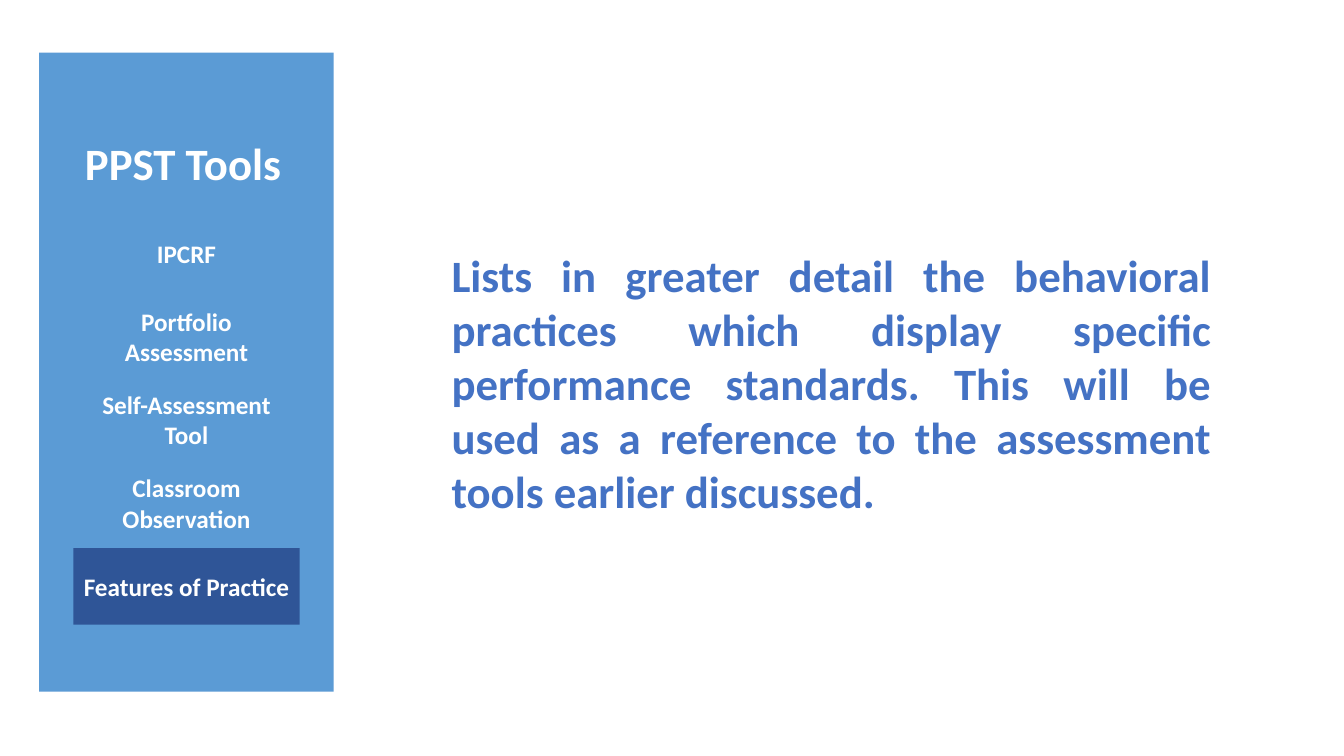
"""Build the PPST Tools slide with its sidebar menu and the Features of Practice text."""
from pptx import Presentation
from pptx.dml.color import RGBColor
from pptx.enum.shapes import MSO_SHAPE
from pptx.enum.text import MSO_ANCHOR, PP_ALIGN
from pptx.util import Cm, Pt

RECT = MSO_SHAPE.RECTANGLE
MIDDLE = MSO_ANCHOR.MIDDLE
CENTER, JUSTIFY = PP_ALIGN.CENTER, PP_ALIGN.JUSTIFY
WHITE = RGBColor(0xFF, 0xFF, 0xFF)
SKY = RGBColor(0x5B, 0x9B, 0xD5)
NAVY = RGBColor(0x2F, 0x55, 0x97)
BLUE = RGBColor(0x44, 0x72, 0xC4)


def add_rect(left, top, width, height, color):
    sp = s.shapes.add_shape(RECT, Cm(left), Cm(top), Cm(width), Cm(height))
    sp.shadow.inherit = False
    sp.fill.solid()
    sp.fill.fore_color.rgb = color
    sp.line.fill.background()
    return sp


def write(sp, text, size, color, align):
    tf = sp.text_frame
    tf.word_wrap = True
    tf.vertical_anchor = MIDDLE
    tf.text = text
    for p in tf.paragraphs:
        p.alignment = align
        for r in p.runs:
            r.font.name = "Calibri"
            r.font.size = Pt(size)
            r.font.bold = True
            r.font.color.rgb = color


prs = Presentation()
prs.slide_width, prs.slide_height = Cm(33.87), Cm(19.05)
s = prs.slides.add_slide(prs.slide_layouts[6])

add_rect(0.99, 1.33, 7.42, 16.1, SKY)

title = s.shapes.add_textbox(Cm(1.68), Cm(3.12), Cm(5.87), Cm(1.93))
write(title, "PPST Tools", 32, WHITE, CENTER)

tools = [
    ("IPCRF", SKY),
    ("Portfolio\nAssessment", SKY),
    ("Self-Assessment Tool", SKY),
    ("Classroom Observation", SKY),
    ("Features of Practice", NAVY),
]
for i, (tool, color) in enumerate(tools):
    sp = add_rect(1.85, 5.41 + 2.1 * i, 5.7, 1.93, color)
    write(sp, tool, 18, WHITE, CENTER)

body = s.shapes.add_textbox(Cm(11.13), Cm(3.15), Cm(19.66), Cm(12.98))
write(
    body,
    "Lists in greater detail the behavioral practices which display specific "
    "performance standards. This will be used as a reference to the assessment "
    "tools earlier discussed.",
    32, BLUE, JUSTIFY,
)

prs.save("out.pptx")
